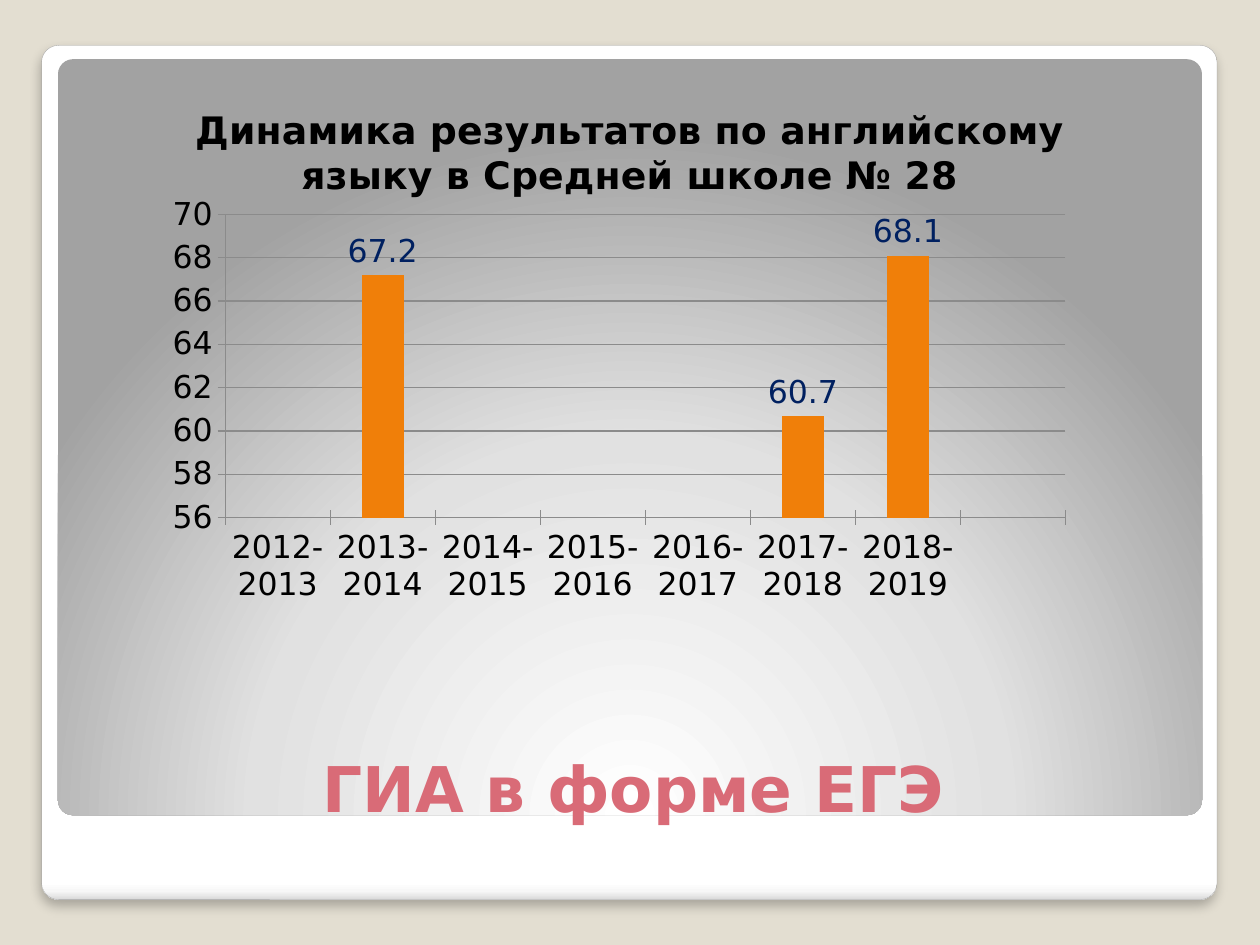
from dataclasses import dataclass
from typing import Optional

from lxml.etree import fromstring
from pptx import Presentation
from pptx.chart.data import CategoryChartData
from pptx.dml.color import RGBColor
from pptx.enum.chart import XL_CHART_TYPE as ChartType
from pptx.enum.chart import XL_LABEL_POSITION as LabelPos
from pptx.enum.chart import XL_TICK_MARK as TickMark
from pptx.enum.shapes import MSO_SHAPE as Shape
from pptx.enum.text import MSO_ANCHOR as Anchor
from pptx.enum.text import PP_ALIGN as Align
from pptx.util import Inches, Pt

FONT = "DejaVu Sans"
BEIGE = RGBColor(0xE3, 0xDE, 0xD1)
GRAY = RGBColor(0xA4, 0xA4, 0xA4)
AXIS_GRAY = RGBColor(0x8B, 0x8B, 0x8B)
ROSE = RGBColor(0xD9, 0x6B, 0x77)
ORANGE = RGBColor(0xF0, 0x7F, 0x09)
NAVY = RGBColor(0x00, 0x20, 0x60)
BLACK = RGBColor(0x00, 0x00, 0x00)
A_NS = 'xmlns:a="http://schemas.openxmlformats.org/drawingml/2006/main"'
C_NS = 'xmlns:c="http://schemas.openxmlformats.org/drawingml/2006/chart"'

LINEAR = '<a:lin ang="5400000" scaled="0"/>'
RADIAL = ('<a:path path="circle"><a:fillToRect l="50000" t="175000" '
          'r="50000" b="-75000"/></a:path>')
SHADOW = (f'<a:effectLst {A_NS}><a:outerShdw blurRad="76200" dist="50800" dir="5400000" '
          'algn="tl" rotWithShape="0"><a:srgbClr val="000000"><a:alpha val="25000"/>'
          '</a:srgbClr></a:outerShdw></a:effectLst>')


@dataclass
class Panel:
    left: float
    top: float
    width: float
    height: float
    stops: list[tuple[int, str]]
    direction: str
    line: Optional[RGBColor] = None
    shadow: bool = False


PANELS = [
    Panel(0.33, 0.36, 9.33, 6.78,
          [(0, "FFFFFF"), (98, "FFFFFF"), (99, "F7F7F7"), (100, "DADADA")],
          LINEAR, GRAY, True),
    Panel(0.46, 0.47, 9.08, 6,
          [(0, "FFFFFF"), (55, "E1E1E1"), (100, "A2A2A2")], RADIAL),
]
YEARS = [f"{year}-{year + 1}" for year in range(2012, 2019)] + [""]
SCORES = [None, 67.2, None, None, None, 60.7, 68.1, None]


def add_panel(slide, panel: Panel) -> None:
    sp = slide.shapes.add_shape(Shape.ROUNDED_RECTANGLE, Inches(panel.left), Inches(panel.top),
                                Inches(panel.width), Inches(panel.height))
    sp.adjustments[0] = 0.02
    sp.shadow.inherit = False
    if panel.line is None:
        sp.line.fill.background()
    else:
        sp.line.color.rgb = panel.line
        sp.line.width = Pt(0.16)
    stops = "".join(f'<a:gs pos="{pos * 1000}"><a:srgbClr val="{color}"/></a:gs>'
                    for pos, color in panel.stops)
    sp_pr = sp._element.spPr
    sp_pr.insert(2, fromstring(f'<a:gradFill {A_NS} rotWithShape="1"><a:gsLst>{stops}'
                               f'</a:gsLst>{panel.direction}</a:gradFill>'))
    if panel.shadow:
        sp_pr.replace(sp_pr[-1], fromstring(SHADOW))


def style_font(font, size: float, color: RGBColor, bold: bool = False) -> None:
    font.name = FONT
    font.size = Pt(size)
    font.bold = bold
    font.color.rgb = color


def add_title(slide, text: str) -> None:
    tf = slide.shapes.add_textbox(Inches(0.55), Inches(5.45), Inches(8.95), Inches(1.15)).text_frame
    tf.word_wrap = True
    tf.vertical_anchor = Anchor.BOTTOM
    p = tf.paragraphs[0]
    p.text = text
    p.alignment = Align.CENTER
    style_font(p.runs[0].font, 36, ROSE, True)


def set_plot_layout(chart, x: float, y: float, w: float, h: float) -> None:
    sizes = "".join(f'<c:{name} val="{value}"/>'
                    for name, value in zip("xywh", (x, y, w, h)))
    layout = fromstring(
        f'<c:layout {C_NS}><c:manualLayout><c:layoutTarget val="inner"/>'
        f'<c:xMode val="edge"/><c:yMode val="edge"/>{sizes}</c:manualLayout></c:layout>')
    plot_area = chart._chartSpace.chart.plotArea
    for old in plot_area.findall(layout.tag):
        plot_area.remove(old)
    plot_area.insert(0, layout)


def add_score_chart(slide, title: str) -> None:
    data = CategoryChartData()
    data.categories = YEARS
    data.add_series("Series 1", SCORES)
    chart = slide.shapes.add_chart(ChartType.COLUMN_CLUSTERED, Inches(0.5), Inches(0.62),
                                   Inches(9), Inches(5.31), data).chart
    style_font(chart.font, 18, BLACK)
    chart.has_legend = False
    chart.has_title = True
    p = chart.chart_title.text_frame.paragraphs[0]
    p.text = title
    style_font(p.runs[0].font, 21.6, BLACK, True)
    chart.chart_title.include_in_layout = False
    set_plot_layout(chart, 0.143, 0.204, 0.741, 0.453)

    for axis in (chart.category_axis, chart.value_axis):
        axis.major_tick_mark = TickMark.CROSS
        axis.format.line.color.rgb = AXIS_GRAY
    chart.value_axis.minimum_scale = 56
    chart.value_axis.maximum_scale = 70
    chart.value_axis.major_unit = 2
    chart.value_axis.has_major_gridlines = True
    chart.value_axis.major_gridlines.format.line.color.rgb = AXIS_GRAY

    plot = chart.plots[0]
    plot.vary_by_categories = False
    plot.gap_width = 150
    series = plot.series[0]
    series.format.fill.solid()
    series.format.fill.fore_color.rgb = ORANGE
    labels = series.data_labels
    labels.show_value = True
    labels.position = LabelPos.OUTSIDE_END
    style_font(labels.font, 18, NAVY)


def main() -> None:
    prs = Presentation()
    prs.slide_width, prs.slide_height = Inches(10), Inches(7.5)
    s = prs.slides.add_slide(prs.slide_layouts[6])
    s.background.fill.solid()
    s.background.fill.fore_color.rgb = BEIGE
    for panel in PANELS:
        add_panel(s, panel)
    add_title(s, "ГИА в форме ЕГЭ")
    add_score_chart(s, "Динамика результатов по английскому языку в Средней школе № 28")
    prs.save("out.pptx")


if __name__ == "__main__":
    main()
